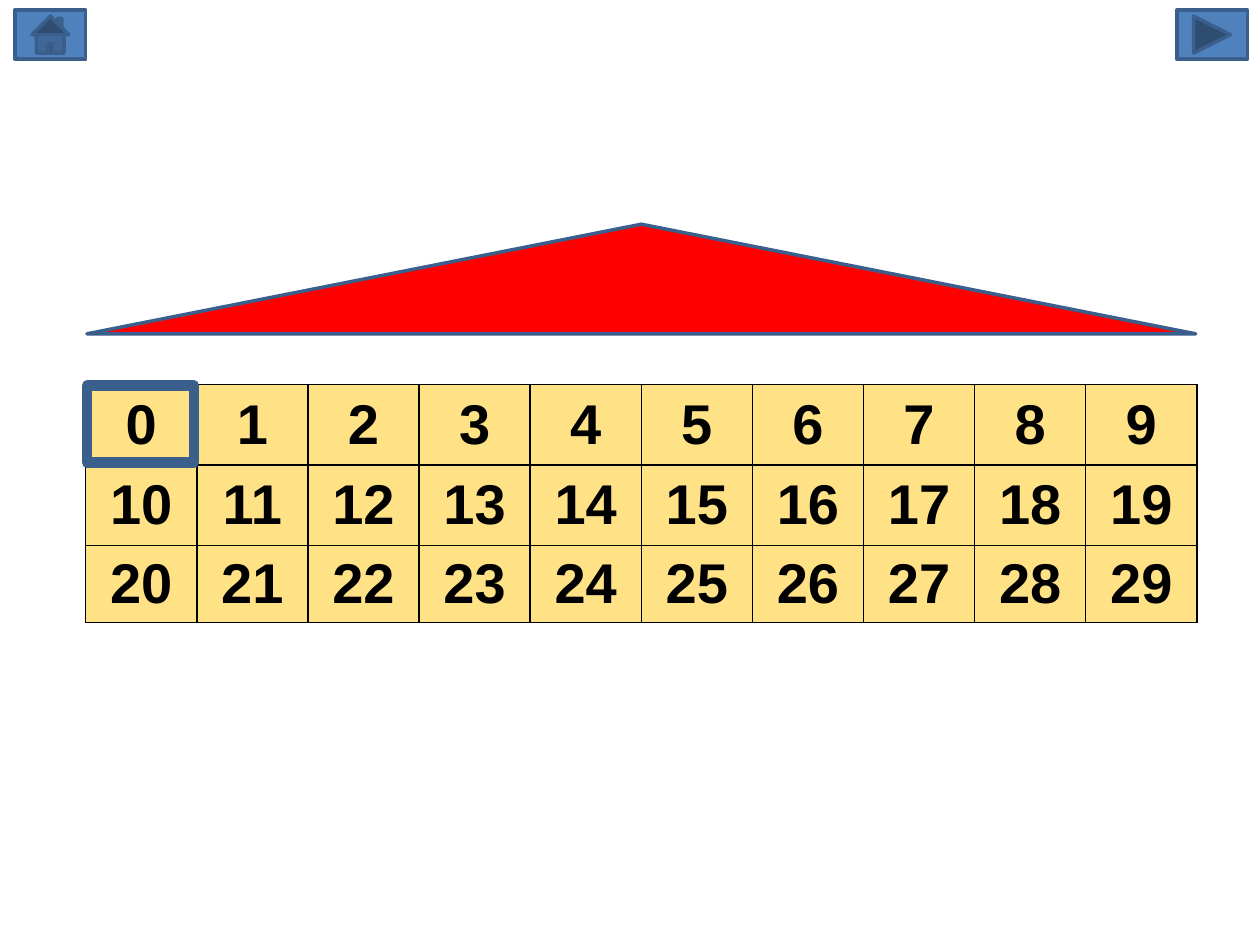
from pptx import Presentation
from pptx.dml.color import RGBColor
from pptx.enum.shapes import MSO_SHAPE
from pptx.enum.text import MSO_ANCHOR, PP_ALIGN
from pptx.oxml import parse_xml
from pptx.oxml.ns import nsdecls
from pptx.util import Inches, Pt

UNIT = Inches(0.1)
COLUMNS, ROWS = 100, 75
NUMBERS_PER_ROW = 10
ROW_HEIGHTS = [6.4, 6.4, 6.1]
NUMBER_FONT = {"name": "Arial", "size": Pt(32), "bold": True}
CELL_FORMAT = {"vertical_anchor": MSO_ANCHOR.MIDDLE,
               "margin_left": 0, "margin_right": 0}


def color(value):
    return RGBColor.from_string(value)


def grid(*values):
    return [round(value * UNIT) for value in values]


def set_all(target, values):
    for name, value in values.items():
        setattr(target, name, value)


def add_outlined(s, kind, box, fill=None, width=2):
    sp = s.shapes.add_shape(kind, *grid(*box))
    sp.shadow.inherit = False
    if fill:
        sp.fill.solid()
        sp.fill.fore_color.rgb = color(fill)
    else:
        sp.fill.background()
    sp.line.color.rgb = color("3A5F8C")
    sp.line.width = Pt(width)


def add_navigation(s, box):
    left, top, width, height = box
    button_width = 5.6
    buttons = [(MSO_SHAPE.ACTION_BUTTON_HOME, left),
               (MSO_SHAPE.ACTION_BUTTON_FORWARD_OR_NEXT,
                left + width - button_width)]
    for kind, x in buttons:
        add_outlined(s, kind, (x, top, button_width, height), "4F81BD")


def add_borders(cell, value, width):
    tcPr = cell._tc.get_or_add_tcPr()
    for side in "LRTB":
        tcPr.append(parse_xml(
            f'<a:ln{side} {nsdecls("a")} w="{Pt(width)}"><a:solidFill>'
            f'<a:srgbClr val="{value}"/></a:solidFill></a:ln{side}>'))


def format_cell(cell, number):
    add_borders(cell, "000000", 1)
    set_all(cell, CELL_FORMAT)
    cell.fill.solid()
    cell.fill.fore_color.rgb = color("FFE285")
    p = cell.text_frame.paragraphs[0]
    p.alignment = PP_ALIGN.CENTER
    r = p.add_run()
    r.text = str(number)
    set_all(r.font, NUMBER_FONT)
    r.font.color.rgb = color("000000")


def add_number_table(s, box):
    table = s.shapes.add_table(
        len(ROW_HEIGHTS), NUMBERS_PER_ROW, *grid(*box)).table
    set_all(table, {"first_row": False, "horz_banding": False})
    for column in table.columns:
        column.width = round(box[2] / NUMBERS_PER_ROW * UNIT)
    for row, height in zip(table.rows, ROW_HEIGHTS):
        row.height = round(height * UNIT)
    for number, cell in enumerate(table.iter_cells()):
        format_cell(cell, number)


def add_house(s, box):
    left, top, width, height = box
    roof_height = 8.7
    walls_height = sum(ROW_HEIGHTS)
    walls_top = top + height - walls_height
    add_number_table(s, (left, walls_top, width, walls_height))
    add_outlined(s, MSO_SHAPE.RECTANGLE,
                 (left + 0.1, walls_top + 0.1, 8.5, 6.1), width=6)
    add_outlined(s, MSO_SHAPE.ISOSCELES_TRIANGLE,
                 (left + 0.1, top, width - 0.2, roof_height), "FF0000")


def main():
    prs = Presentation()
    prs.slide_width, prs.slide_height = grid(COLUMNS, ROWS)
    s = prs.slides.add_slide(prs.slide_layouts[6])
    add_navigation(s, (1.2, 0.8, 97.8, 3.9))
    add_house(s, (6.8, 17.8, 88.2, 31.6))
    prs.save("out.pptx")


if __name__ == "__main__":
    main()
